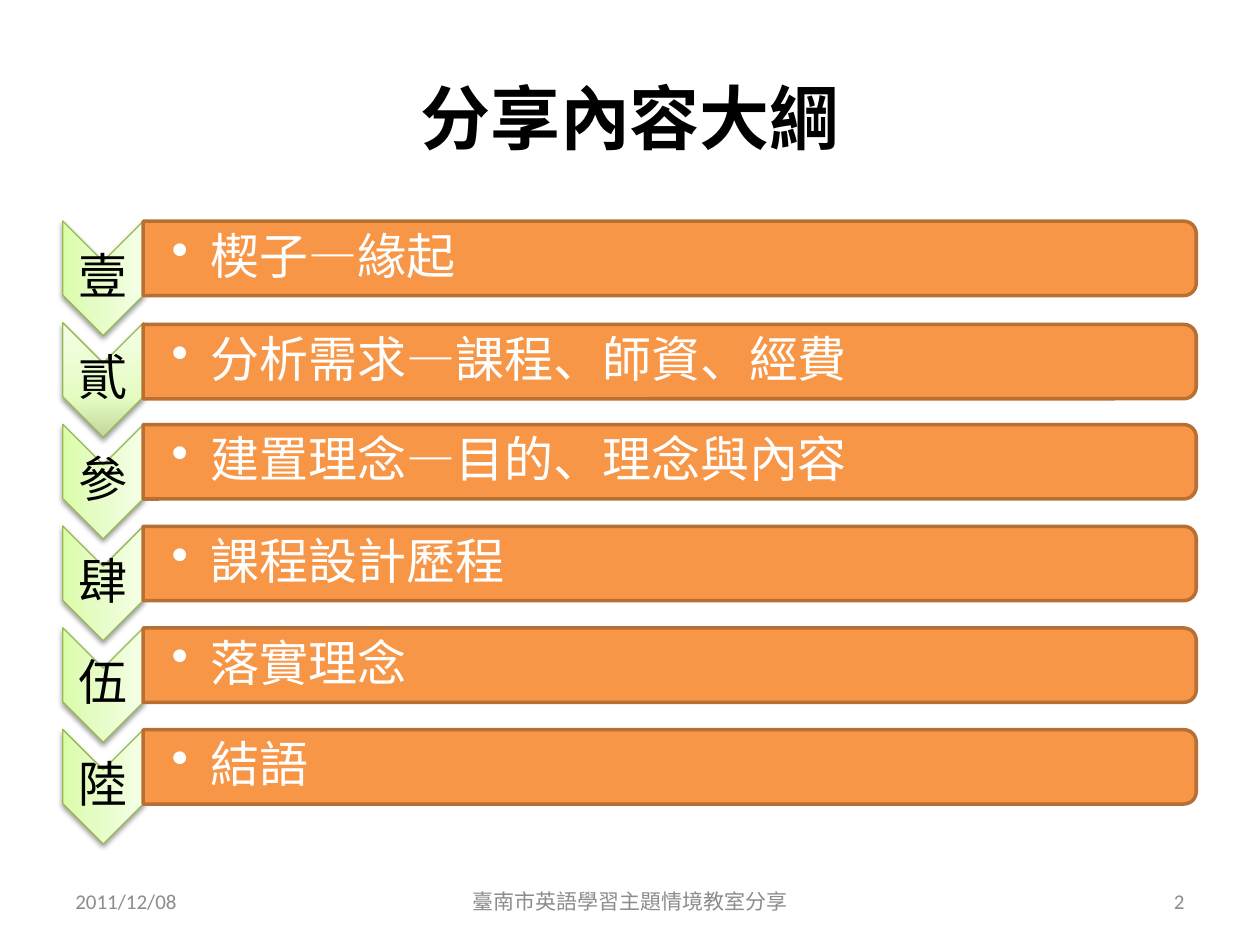
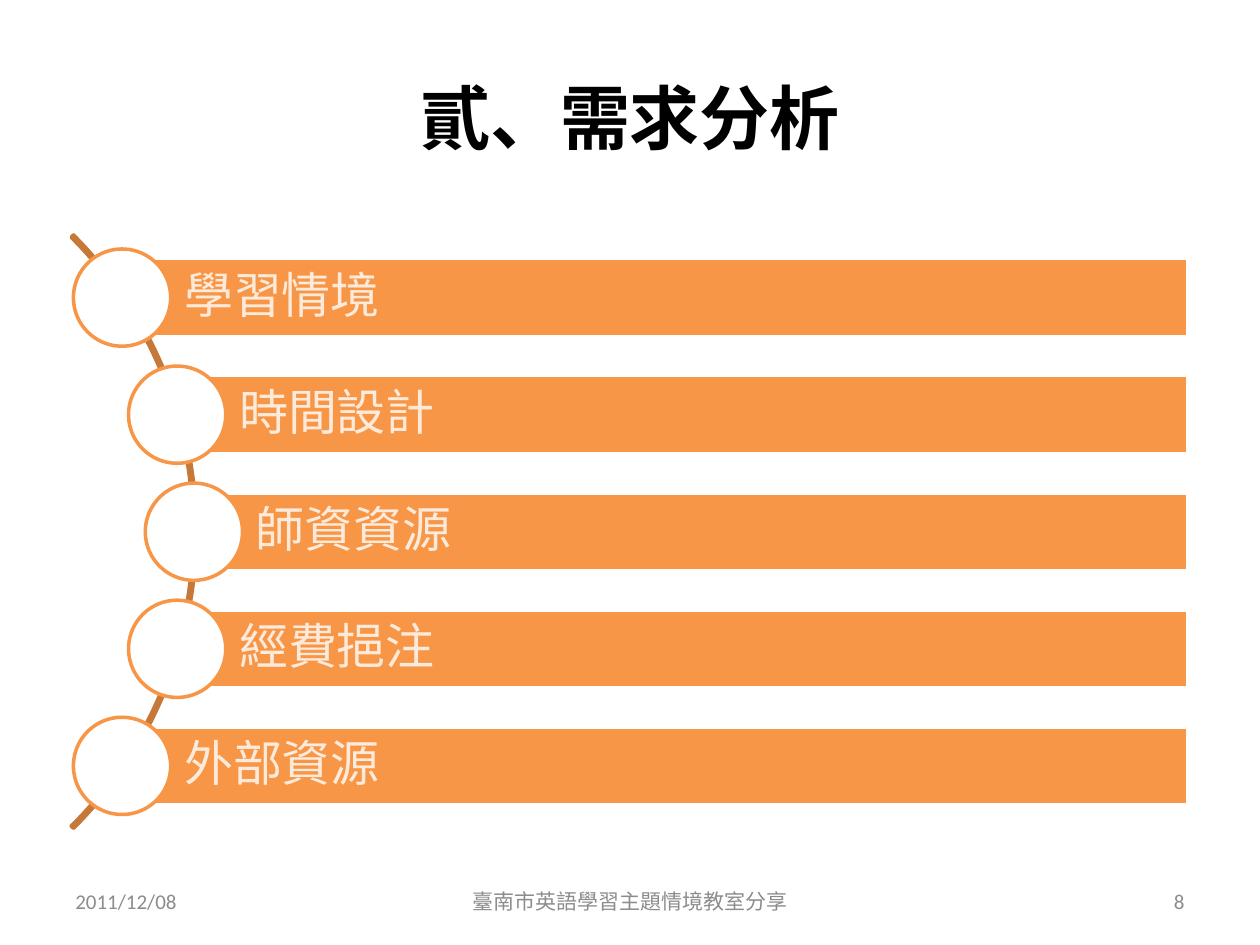
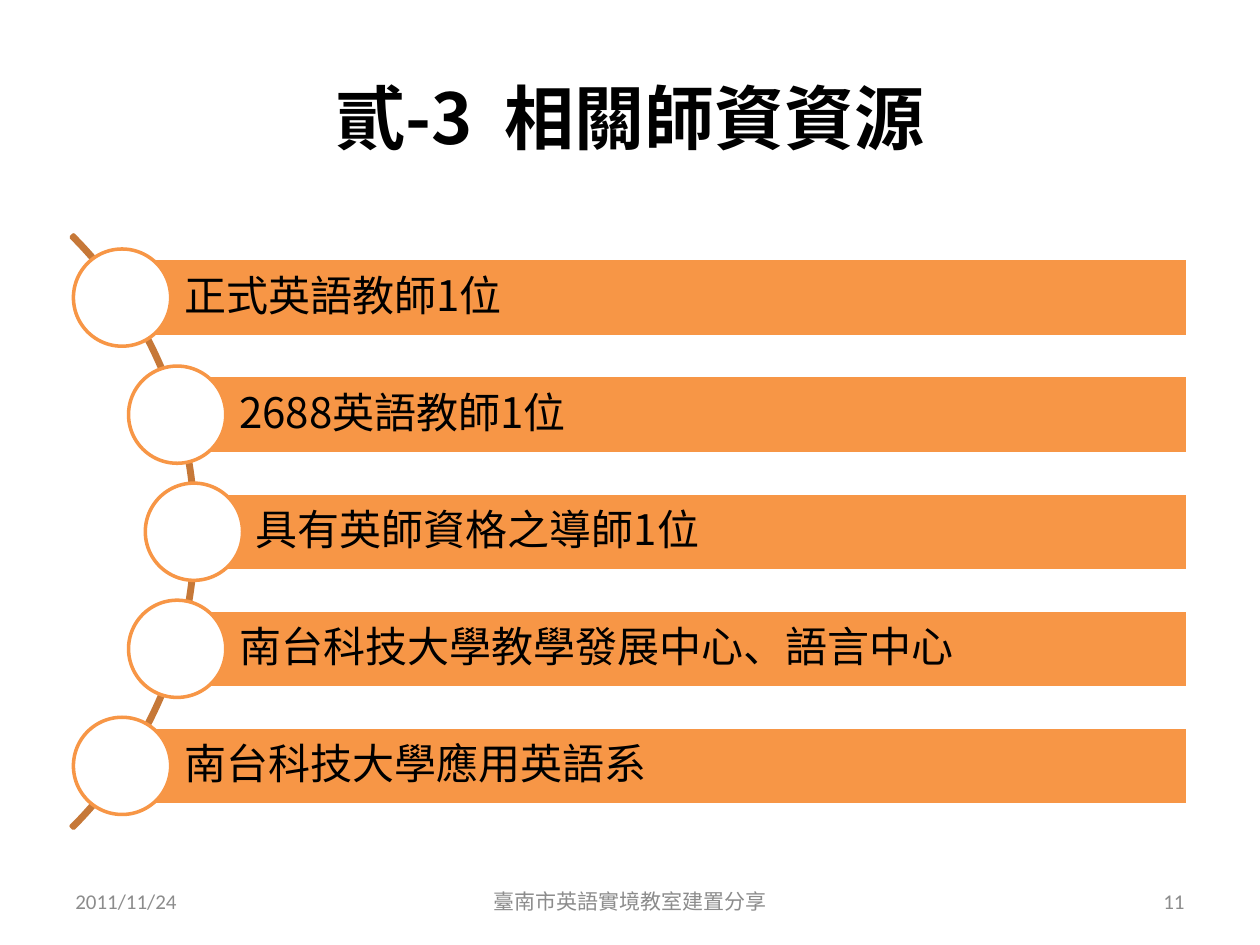
"""Build three slides on the English theme classroom: outline, needs and teachers."""
from math import sqrt

from lxml.etree import SubElement
from pptx import Presentation
from pptx.dml.color import RGBColor
from pptx.enum.shapes import MSO_SHAPE as Preset
from pptx.enum.text import MSO_ANCHOR as Anchor, PP_ALIGN as Align
from pptx.oxml import parse_xml
from pptx.oxml.ns import nsdecls, qn
from pptx.util import Cm, Pt

COLORS = {
    "black": "000000", "white": "FFFFFF", "cream": "FDEADA", "gray": "8C8C8C",
    "orange": "F79646", "brown": "B76F34", "arc": "C67838",
    "lime": "DAFDA7", "olive": "C3D69B", "pale": "E4FCC2", "mist": "F5FFE7",
    "green": "98B955",
}
CJK, LATIN = "Noto Sans CJK SC", "Calibri"

OUTLINE = {
    "title": [("分享內容大綱", 0)],
    "footer": ("2011/12/08", "臺南市英語學習主題情境教室分享", "2"),
    "rows": [("壹", "楔子—緣起"), ("貳", "分析需求—課程、師資、經費"),
             ("參", "建置理念—目的、理念與內容"), ("肆", "課程設計歷程"),
             ("伍", "落實理念"), ("陸", "結語")],
    "highlight": "貳",
}
ARC_PAGES = [
    {
        "title": [("貳、需求分析", 0)],
        "footer": ("2011/12/08", "臺南市英語學習主題情境教室分享", "8"),
        "rows": ["學習情境", "時間設計", "師資資源", "經費挹注", "外部資源"],
        "size": 28, "color": "cream",
    },
    {
        "title": [("貳-3", 0), (" ", 9), ("相關師資資源", 0)],
        "footer": ("2011/11/24", "臺南市英語實境教室建置分享", "11"),
        "rows": ["正式英語教師1位", "2688英語教師1位", "具有英師資格之導師1位",
                 "南台科技大學教學發展中心、語言中心", "南台科技大學應用英語系"],
        "size": 24, "color": "black",
    },
]
FOOTER_SLOTS = [(1.27, 5.93, Align.LEFT), (8.68, 8.04, Align.CENTER),
                (18.2, 5.93, Align.RIGHT)]


def rgb(name):
    return RGBColor.from_string(COLORS[name])


def add_span(para, text, size, color, font=CJK, bold=False, spacing=0):
    span = para.add_run()
    span.text = text
    span.font.size, span.font.bold, span.font.name = Pt(size), bold, font
    span.font.color.rgb = rgb(color)
    properties = span.font._element
    SubElement(properties, qn("a:ea")).set("typeface", CJK)
    if spacing:
        properties.set("spc", str(spacing * 100))


def format_frame(shape, insets, align, line_spacing=None):
    frame = shape.text_frame
    frame.word_wrap, frame.vertical_anchor = True, Anchor.MIDDLE
    (frame.margin_left, frame.margin_top,
     frame.margin_right, frame.margin_bottom) = [Cm(inset) for inset in insets]
    para = frame.paragraphs[0]
    para.alignment = align
    if line_spacing:
        para.line_spacing = line_spacing
    return para


def add_box(page, left, top, width, height, insets, align, line_spacing=None):
    box = page.shapes.add_textbox(Cm(left), Cm(top), Cm(width), Cm(height))
    return format_frame(box, insets, align, line_spacing)


def add_centered(page, preset, x, y, width, height, fill, line, weight=2):
    shape = page.shapes.add_shape(preset, Cm(x - width / 2), Cm(y - height / 2),
                                  Cm(width), Cm(height))
    shape.shadow.inherit = False
    if fill:
        shape.fill.solid()
        shape.fill.fore_color.rgb = rgb(fill)
    else:
        shape.fill.background()
    shape.line.color.rgb, shape.line.width = rgb(line), Pt(weight)
    return shape


def add_page(deck, content):
    page = deck.slides.add_slide(deck.slide_layouts[5])
    title = page.shapes.title
    title.left, title.top, title.width, title.height = Cm(1.27), Cm(0.76), Cm(22.86), Cm(3.18)
    para = format_frame(title, (0.25, 0.13, 0.25, 0.13), Align.CENTER)
    for text, spacing in content["title"]:
        add_span(para, text, 40, "black", bold=True, spacing=spacing)
    return page


def add_footer(page, texts):
    for text, (left, width, align) in zip(texts, FOOTER_SLOTS):
        para = add_box(page, left, 17.65, width, 1.02, (0.25, 0.13, 0.25, 0.13), align)
        add_span(para, text, 12, "gray", LATIN)


def style_chevron(shape, first_color, turns):
    stops = zip((0, 35, 100), (first_color, "pale", "mist"))
    stop_xml = "".join(f'<a:gs pos="{at * 1000}"><a:srgbClr val="{COLORS[name]}"/></a:gs>'
                       for at, name in stops)
    properties = shape._element.spPr
    properties.replace(properties.find(qn("a:solidFill")), parse_xml(
        f'<a:gradFill {nsdecls("a")} rotWithShape="{int(turns)}"><a:gsLst>{stop_xml}</a:gsLst>'
        '<a:lin ang="16200000" scaled="1"/></a:gradFill>'))
    properties.find(qn("a:effectLst")).append(parse_xml(
        f'<a:outerShdw {nsdecls("a")} blurRad="{Pt(3.1)}" dist="{Pt(1.6)}" dir="5400000" '
        f'rotWithShape="0"><a:srgbClr val="{COLORS["black"]}"><a:alpha val="38000"/>'
        '</a:srgbClr></a:outerShdw>'))


def add_bullet(para):
    properties = para._p.get_or_add_pPr()
    properties.set("marL", str(Cm(0.79)))
    properties.set("indent", str(-Cm(0.79)))
    SubElement(properties, qn("a:buChar")).set("char", "•")


def build_outline(deck, content):
    page = add_page(deck, content)
    pitch = 2.05
    for index, (numeral, topic) in enumerate(content["rows"]):
        special = numeral == content["highlight"]
        chevron_y = 5.61 + index * pitch
        bar_y = 5.21 + index * pitch + (0.03 if special else 0)
        chevron = add_centered(page, Preset.CHEVRON, 2.08, chevron_y, 2.31, 1.63,
                               "pale", "green", 0.75)
        chevron.rotation = 90
        style_chevron(chevron, "olive" if special else "lime", not special)
        para = add_box(page, 1.27, chevron_y - 0.34, 1.63, 0.68, (0.05,) * 4,
                       Align.CENTER, 0.9)
        add_span(para, numeral, 28, "black")
        bar = add_centered(page, Preset.ROUND_2_SAME_RECTANGLE, 13.5, bar_y, 1.5, 21.23,
                           "orange", "brown")
        bar.rotation = 90
        para = add_box(page, 2.9, bar_y - 0.68, 21.16, 1.36, (0.56, 0.05, 0.05, 0.05),
                       Align.LEFT, 0.9)
        add_bullet(para)
        add_span(para, topic, 28, "white")
    add_footer(page, content["footer"])


def build_arc_page(deck, content):
    page = add_page(deck, content)
    center_x, center_y, radius, pitch, right = -4.5, 10.72, 8.41, 2.36, 23.95
    arc = add_centered(page, Preset.BLOCK_ARC, center_x, center_y, 16.92, 16.92, None, "arc")
    for index, value in enumerate((189, 27, 0.004)):
        arc.adjustments[index] = value
    middle = (len(content["rows"]) - 1) / 2
    for index, text in enumerate(content["rows"]):
        offset = (index - middle) * pitch
        x, y = center_x + sqrt(radius ** 2 - offset ** 2), center_y + offset
        bar = add_centered(page, Preset.RECTANGLE, (x + right) / 2, y, right - x, 1.57,
                           "orange", "white")
        para = format_frame(bar, (1.25, 0.19, 0.19, 0.19), Align.LEFT, 0.9)
        add_span(para, text, content["size"], content["color"])
        add_centered(page, Preset.OVAL, x, y, 1.96, 1.96, "white", "orange")
    add_footer(page, content["footer"])


def main():
    deck = Presentation()
    deck.slide_width, deck.slide_height = Cm(25.4), Cm(19.05)
    build_outline(deck, OUTLINE)
    for content in ARC_PAGES:
        build_arc_page(deck, content)
    deck.save("out.pptx")


if __name__ == "__main__":
    main()
